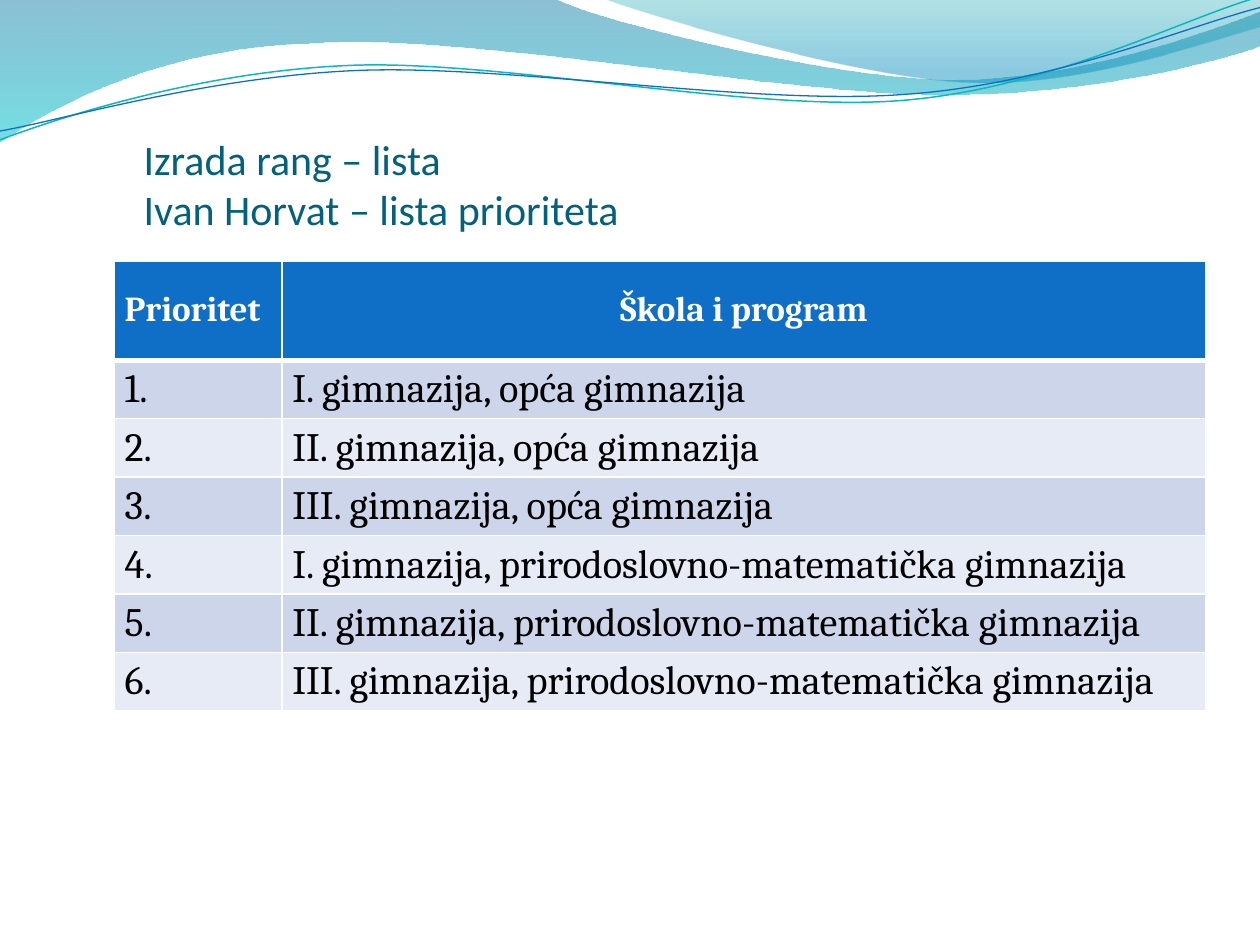
import pptx
import pptx.util
import pptx.dml.color
import pptx.enum.text
import pptx.oxml
import pptx.oxml.ns
from lxml import etree

Inches, Pt = pptx.util.Inches, pptx.util.Pt
qn = pptx.oxml.ns.qn

TITLE = ["Izrada rang – lista", "Ivan Horvat – lista prioriteta"]
HEADS = ["Prioritet", "Škola i program"]
PROGRAMS = ["opća gimnazija", "prirodoslovno-matematička gimnazija"]
SCHOOLS = ["I. gimnazija", "II. gimnazija", "III. gimnazija"]
CHOICES = [f"{school}, {program}" for program in PROGRAMS for school in SCHOOLS]

THEME = {
    "title": ("Calibri", 24, "04617B"),
    "head": ("Cambria", 20, "FFFFFF"),
    "body": ("Cambria", 23, "000000"),
    "head_fill": "0F6FC6",
    "bands": ["CCD5EA", "E7EBF5"],
    "border": "FFFFFF",
}

# A pair is a straight step; six numbers are a cubic curve.
# Gradient stops: position, colour, opacity in percent.
WAVES = [
    {"steps": [(0, 0), (4.4, -0.01), (4.76, 0.17, 6.64, 0.63, 7.58, 0.63),
               (8.53, 0.63, 9.58, 0.26, 10, 0.09), (10.01, 0.36),
               (9.83, 0.44, 8.7, 0.76, 7.46, 0.75),
               (6.22, 0.75, 3.82, 0.28, 2.57, 0.34),
               (1.29, 0.36, 0.46, 0.83, -0.01, 1.13)],
     "stops": [(0, "0074A1", 45), (1, "00C6CF", 55)]},
    {"steps": [(4.79, -0.01), (5.09, 0.11, 6.82, 0.62, 7.69, 0.65),
               (8.56, 0.69, 9.61, 0.32, 10, 0.21), (10, 0)],
     "stops": [(0, "00A1A9", 30), (0.8, "008BBF", 45)]},
    {"steps": [(0, 1.11), (0.48, 0.93, 1.58, 0.57, 2.77, 0.52),
               (3.95, 0.47, 5.93, 0.89, 7.13, 0.8),
               (8.33, 0.71, 9.38, 0.15, 9.98, -0.02)],
     "line": ("0AB8BF", 0.85)},
    {"steps": [(0, 1.04), (0.47, 0.96, 1.64, 0.61, 2.83, 0.56),
               (4.03, 0.51, 5.97, 0.84, 7.17, 0.75),
               (8.36, 0.67, 9.41, 0.21, 10, 0.06)],
     "line": ("0F6FC6", 0.75)},
]


def rgb(code):
    return pptx.dml.color.RGBColor.from_string(code)


def bend(shape, steps):
    """Join each three line segments of a cubic step into one curve."""
    lines = iter(list(shape._element.iter(qn("a:lnTo"))))
    for step in steps[1:]:
        group = [next(lines) for _ in range(len(step) // 2)]
        if len(group) == 3:
            curve = etree.Element(qn("a:cubicBezTo"))
            group[0].addprevious(curve)
            for line in group:
                curve.append(line[0])
                line.getparent().remove(line)


def draw_wave(slide, wave):
    steps = wave["steps"]
    points = [(Inches(step[i]), Inches(step[i + 1]))
              for step in steps for i in range(0, len(step), 2)]
    pen = slide.shapes.build_freeform(*points[0])
    pen.add_line_segments(points[1:], close="stops" in wave)
    shape = pen.convert_to_shape()
    bend(shape, steps)
    shape.shadow.inherit = False
    if "line" in wave:
        color, width = wave["line"]
        shape.fill.background()
        shape.line.color.rgb = rgb(color)
        shape.line.width = Pt(width)
        return
    shape.line.fill.background()
    shape.fill.gradient()
    shape.fill.gradient_angle = 270
    for stop, (place, color, opacity) in zip(shape.fill.gradient_stops, wave["stops"]):
        stop.position = place
        stop.color.rgb = rgb(color)
    tints = shape.fill._xPr.iter(qn("a:srgbClr"))
    for tint, (place, color, opacity) in zip(tints, wave["stops"]):
        etree.SubElement(tint, qn("a:alpha"), val=str(opacity * 1000))


def style(frame, role):
    name, size, color = THEME[role]
    for para in frame.paragraphs:
        para.font.name = name
        para.font.size = Pt(size)
        para.font.color.rgb = rgb(color)
        para.font.bold = role == "head"


def draw_title(slide):
    box = slide.shapes.add_textbox(Inches(1.14), Inches(0.6), Inches(8.36), Inches(1.26))
    frame = box.text_frame
    frame.word_wrap = True
    frame.vertical_anchor = pptx.enum.text.MSO_ANCHOR.BOTTOM
    frame.margin_left = frame.margin_right = frame.margin_bottom = 0
    frame.text = "\v".join(TITLE)
    style(frame, "title")


def add_borders(cell, widths):
    """Set left, right, top and bottom borders, given in points."""
    props = cell._tc.get_or_add_tcPr()
    for i, (side, width) in enumerate(zip("LRTB", widths)):
        line = etree.Element(qn(f"a:ln{side}"), w=str(Pt(width)))
        fill = etree.SubElement(line, qn("a:solidFill"))
        etree.SubElement(fill, qn("a:srgbClr"), val=THEME["border"])
        props.insert(i, line)


def draw_table(slide):
    rows = [HEADS] + [[f"{i}.", choice] for i, choice in enumerate(CHOICES, 1)]
    widths = [1.33, 7.33]
    heights = [0.79] + [0.44] * len(CHOICES)
    frame = slide.shapes.add_table(
        len(rows), len(widths), Inches(0.91), Inches(2.07),
        Inches(sum(widths)), Inches(sum(heights)))
    table = frame.table
    for column, width in zip(table.columns, widths):
        column.width = Inches(width)
    for r, (texts, height) in enumerate(zip(rows, heights)):
        table.rows[r].height = Inches(height)
        for c, text in enumerate(texts):
            cell = table.cell(r, c)
            cell.text = text
            cell.margin_left = cell.margin_right = Inches(0.08)
            cell.fill.solid()
            fill = THEME["bands"][(r - 1) % 2] if r else THEME["head_fill"]
            cell.fill.fore_color.rgb = rgb(fill)
            style(cell.text_frame, "body" if r else "head")
            add_borders(cell, (1, 1, 3 if r == 1 else 1, 1 if r else 3))
            if r == 0:
                cell.vertical_anchor = pptx.enum.text.MSO_ANCHOR.MIDDLE
            else:
                cell.margin_bottom = Inches(0.03)
    table.cell(0, 1).text_frame.paragraphs[0].alignment = pptx.enum.text.PP_ALIGN.CENTER
    frame.height = Inches(4.04)


def main():
    deck = pptx.Presentation()
    deck.slide_width, deck.slide_height = Inches(10), Inches(7.5)
    slide = deck.slides.add_slide(deck.slide_layouts[6])
    for wave in WAVES:
        draw_wave(slide, wave)
    draw_title(slide)
    draw_table(slide)
    deck.save("out.pptx")


if __name__ == "__main__":
    main()
